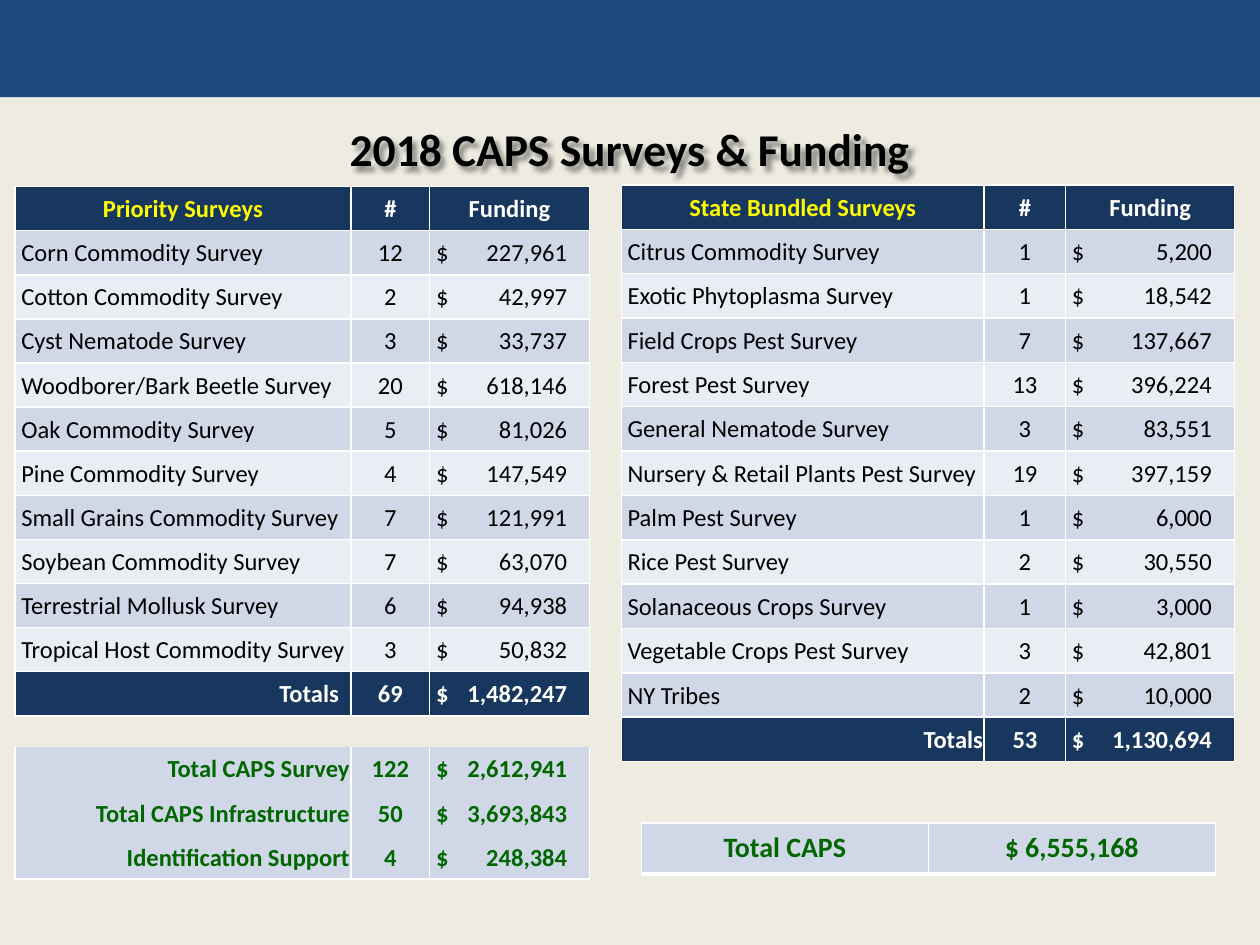
from lxml import etree
from pptx import Presentation
from pptx.dml.color import RGBColor
from pptx.enum.shapes import MSO_SHAPE
from pptx.enum.text import MSO_ANCHOR, PP_ALIGN
from pptx.oxml.ns import qn
from pptx.util import Pt

LEFT, CENTER, RIGHT = PP_ALIGN.LEFT, PP_ALIGN.CENTER, PP_ALIGN.RIGHT
MIDDLE = MSO_ANCHOR.MIDDLE
RECTANGLE = MSO_SHAPE.RECTANGLE
PLAIN_TABLE_STYLE = "{2D5ABB26-0587-4C30-8999-92F81FD0307C}"

# Content
TITLE = "2018 CAPS Surveys & Funding"
PRIORITY = [
    ("Priority Surveys", "#", "Funding"),
    ("Corn Commodity Survey", "12", "227,961"),
    ("Cotton Commodity Survey", "2", "42,997"),
    ("Cyst Nematode Survey", "3", "33,737"),
    ("Woodborer/Bark Beetle Survey", "20", "618,146"),
    ("Oak Commodity Survey", "5", "81,026"),
    ("Pine Commodity Survey", "4", "147,549"),
    ("Small Grains Commodity Survey", "7", "121,991"),
    ("Soybean Commodity Survey", "7", "63,070"),
    ("Terrestrial Mollusk Survey", "6", "94,938"),
    ("Tropical Host Commodity Survey", "3", "50,832"),
    ("Totals", "69", "1,482,247"),
]
SUMMARY = [
    ("Total CAPS Survey", "122", "2,612,941"),
    ("Total CAPS Infrastructure", "50", "3,693,843"),
    ("Identification Support", "4", "248,384"),
]
BUNDLED = [
    ("State Bundled Surveys", "#", "Funding"),
    ("Citrus Commodity Survey", "1", "5,200"),
    ("Exotic Phytoplasma Survey", "1", "18,542"),
    ("Field Crops Pest Survey", "7", "137,667"),
    ("Forest Pest Survey", "13", "396,224"),
    ("General Nematode Survey", "3", "83,551"),
    ("Nursery & Retail Plants Pest Survey", "19", "397,159"),
    ("Palm Pest Survey", "1", "6,000"),
    ("Rice Pest Survey", "2", "30,550"),
    ("Solanaceous Crops Survey", "1", "3,000"),
    ("Vegetable Crops Pest Survey", "3", "42,801"),
    ("NY Tribes", "2", "10,000"),
    ("Totals", "53", "1,130,694"),
]
GRAND_TOTAL = ("Total CAPS", "$ 6,555,168")

THEME = {
    "font": "Calibri", "background": "EEECE1", "banner": "1F497D",
    "header": "17375E", "bands": ("E9EDF4", "D0D8E8"), "border": "FFFFFF",
    "heading": "FFFF00", "light": "FFFFFF", "text": "000000", "total": "006600",
    "title_size": 26, "table_size": 14, "total_size": 16,
}
TIGHT, INSET = 0.72, 3.6
GAP_HEIGHT = 7.2


def color(name):
    return RGBColor.from_string(name)


def write(frame, text, size=THEME["table_size"], ink=THEME["text"], bold=False,
          align=LEFT, tab=None):
    paragraph = frame.paragraphs[0]
    paragraph.alignment = align
    if tab:
        tabs = etree.SubElement(paragraph._p.get_or_add_pPr(), qn("a:tabLst"))
        etree.SubElement(tabs, qn("a:tab"), pos=str(Pt(tab)), algn="r")
    run = paragraph.add_run()
    run.text = text
    run.font.name, run.font.size, run.font.bold = THEME["font"], Pt(size), bold
    run.font.color.rgb = color(ink)


def style_cell(cell, fill, borders):
    """Fill a cell and draw the given sides, a dict of side letter to width."""
    cell.vertical_anchor = MIDDLE
    if fill:
        cell.fill.solid()
        cell.fill.fore_color.rgb = color(fill)
    else:
        cell.fill.background()
    properties = cell._tc.get_or_add_tcPr()
    sides = [side for side in "LRTB" if side in borders]
    for index, side in enumerate(sides):
        line = etree.Element(qn(f"a:ln{side}"), w=str(Pt(borders[side])))
        solid = etree.SubElement(line, qn("a:solidFill"))
        etree.SubElement(solid, qn("a:srgbClr"), val=THEME["border"])
        properties.insert(index, line)


def set_margins(cell, left=TIGHT, right=TIGHT):
    cell.margin_left, cell.margin_right = Pt(left), Pt(right)
    cell.margin_top, cell.margin_bottom = Pt(TIGHT), 0


def add_table(slide, left, top, widths, heights):
    table = slide.shapes.add_table(len(heights), len(widths), Pt(left), Pt(top),
                                   Pt(sum(widths)), Pt(sum(heights))).table
    table.first_row = table.horz_banding = False
    table._tbl.tblPr.find(qn("a:tableStyleId")).text = PLAIN_TABLE_STYLE
    for column, width in zip(table.columns, widths):
        column.width = Pt(width)
    for row, height in zip(table.rows, heights):
        row.height = Pt(height)
    return table


def fill_row(table, index, values, fill, ink, borders, bold=False, heading=None,
             name_align=LEFT, name_right=TIGHT, tab=None):
    name, count, amount = table.rows[index].cells
    for cell in (name, count, amount):
        style_cell(cell, fill, borders)
        set_margins(cell)
    set_margins(name, INSET if name_align == LEFT else TIGHT, name_right)
    write(name.text_frame, values[0], ink=heading or ink, bold=bold, align=name_align)
    write(count.text_frame, values[1], ink=ink, bold=bold, align=CENTER)
    if tab:
        set_margins(amount, INSET)
        write(amount.text_frame, f"$\t{values[2]}", ink=ink, bold=bold, tab=tab)
    else:
        write(amount.text_frame, values[2], ink=ink, bold=bold, align=CENTER)


def fill_surveys(table, rows, tab, totals_borders, totals_right=TIGHT):
    last = len(rows) - 1
    grid = dict.fromkeys("LRTB", 1)
    fill_row(table, 0, rows[0], THEME["header"], THEME["light"], grid, bold=True,
             heading=THEME["heading"], name_align=CENTER)
    for index in range(1, last):
        fill_row(table, index, rows[index], THEME["bands"][index % 2],
                 THEME["text"], grid, tab=tab)
    fill_row(table, last, rows[last], THEME["header"], THEME["light"],
             dict.fromkeys(totals_borders, 1), bold=True, name_align=RIGHT,
             name_right=totals_right, tab=tab)


def main():
    presentation = Presentation()
    presentation.slide_width, presentation.slide_height = Pt(720), Pt(540)
    slide = presentation.slides.add_slide(presentation.slide_layouts[6])
    slide.background.fill.solid()
    slide.background.fill.fore_color.rgb = color(THEME["background"])

    # Banner
    banner = slide.shapes.add_shape(RECTANGLE, 0, 0, Pt(720), Pt(55.5))
    banner.shadow.inherit = False
    banner.fill.solid()
    banner.fill.fore_color.rgb = color(THEME["banner"])
    banner.line.fill.background()

    # Priority surveys, a gap row, then the summary rows
    row_height, tab = 25.2, 75
    heights = ([row_height] * len(PRIORITY) + [GAP_HEIGHT]
               + [row_height] * len(SUMMARY))
    table = add_table(slide, 8.6, 106.6, (192, 45, 91.2), heights)
    fill_surveys(table, PRIORITY, tab, "LRT", totals_right=7)
    gap = len(PRIORITY)
    for cell in table.rows[gap].cells:
        style_cell(cell, None, {})
        set_margins(cell)
        etree.SubElement(cell.text_frame.paragraphs[0]._p, qn("a:endParaRPr"),
                         sz=str(THEME["table_size"] * 100))
    for index, values in enumerate(SUMMARY, 1):
        sides = "LRB" if index == len(SUMMARY) else "LR"
        fill_row(table, gap + index, values, THEME["bands"][1], THEME["total"],
                 dict.fromkeys(sides, 1), bold=True, name_align=RIGHT, tab=tab)

    # State bundled surveys
    table = add_table(slide, 355, 105.7, (207.4, 46.6, 96.5), [25.37] * len(BUNDLED))
    fill_surveys(table, BUNDLED, 80, "LRTB")

    # Title
    title = slide.shapes.add_textbox(Pt(36), Pt(57), Pt(648), Pt(56))
    title.text_frame.word_wrap = True
    title.text_frame.vertical_anchor = MIDDLE
    write(title.text_frame, TITLE, size=THEME["title_size"], bold=True, align=CENTER)
    effects = etree.SubElement(title._element.spPr, qn("a:effectLst"))
    shadow = etree.SubElement(effects, qn("a:outerShdw"), blurRad=str(Pt(3)),
                              dist=str(Pt(3)), dir="2700000", algn="tl")
    shade = etree.SubElement(shadow, qn("a:srgbClr"), val=THEME["text"])
    etree.SubElement(shade, qn("a:alpha"), val="43000")

    # Grand total
    table = add_table(slide, 366.5, 470.2, (164, 164), [29.2])
    for cell, text in zip(table.rows[0].cells, GRAND_TOTAL):
        style_cell(cell, THEME["bands"][1], {"L": 1, "R": 1, "T": 1, "B": 3})
        write(cell.text_frame, text, size=THEME["total_size"], ink=THEME["total"],
              bold=True, align=CENTER)

    presentation.save("out.pptx")


if __name__ == "__main__":
    main()
